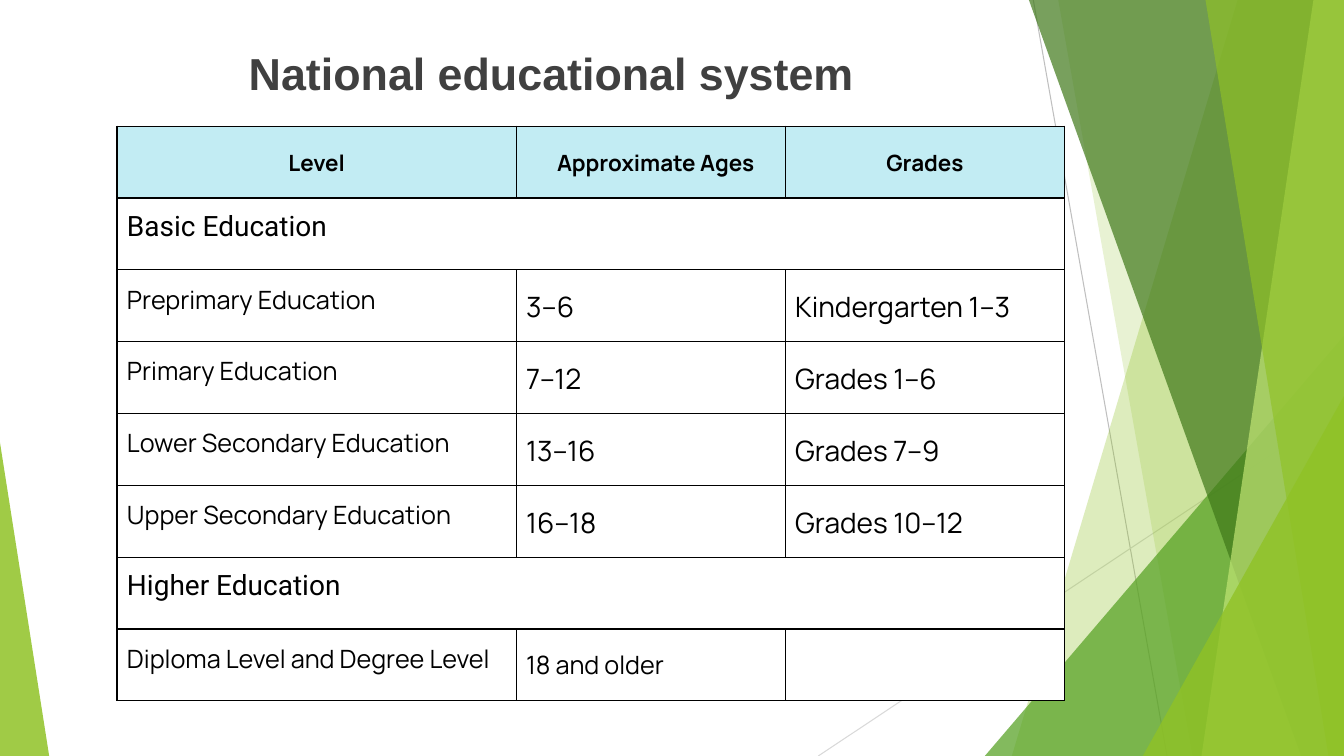
from dataclasses import dataclass
from typing import Optional

from lxml import etree
from pptx import Presentation
from pptx.dml.color import RGBColor
from pptx.enum import shapes, text
from pptx.oxml.ns import qn
from pptx.util import Cm, Pt

WIDTH, HEIGHT = 33.87, 19.05


@dataclass(frozen=True)
class Theme:
    ink: str = "000000"
    title: str = "404040"
    header: str = "C2ECF3"
    paper: str = "FFFFFF"
    green: str = "90C226"
    mid_green: str = "54A021"
    dark_green: str = "3F7819"
    pale_green: str = "C0E474"
    title_font: str = "Arial"
    body_font: str = "Manrope"
    section_font: str = "Roboto"
    title_size: float = 32
    value_size: float = 20
    level_size: float = 18
    header_size: float = 16


THEME = Theme()


@dataclass(frozen=True)
class Ray:
    start: tuple[float, float]
    end: tuple[float, float]
    color: str


@dataclass(frozen=True)
class Band:
    """A slanted left edge, filled out to the right side of the slide."""
    top_x: float
    bottom_x: float
    color: str
    opacity: int


@dataclass(frozen=True)
class Wedge:
    """A right triangle standing on the bottom of the slide."""
    left: float
    width: float
    height: float
    apex: float
    color: str
    opacity: int


@dataclass(frozen=True)
class Level:
    name: str
    ages: str = ""
    grades: str = ""
    section: bool = False


RAYS = [
    Ray((26.04, 0), (29.41, HEIGHT), "BFBFBF"),
    Ray((WIDTH, 10.24), (20.62, HEIGHT), "D9D9D9"),
]
FACETS = [
    Band(31.19, 25.5, THEME.green, 30),
    Band(26.67, 30.05, THEME.green, 20),
    Wedge(24.82, 9.05, 10.59, 1, THEME.mid_green, 72),
    Band(25.93, 32.79, THEME.dark_green, 70),
    Band(33.1, 30.28, THEME.pale_green, 70),
    Band(30.38, 33.48, THEME.green, 65),
    Wedge(28.8, 5.07, 9.07, 1, THEME.green, 80),
    Wedge(0, 1.24, 7.9, 0, THEME.green, 85),
]
HEADERS = ["Level", "Approximate Ages", "Grades"]
LEVELS = [
    Level("Basic Education", section=True),
    Level("Preprimary Education", "3–6", "Kindergarten 1–3"),
    Level("Primary Education", "7–12", "Grades 1–6"),
    Level("Lower Secondary Education", "13–16", "Grades 7–9"),
    Level("Upper Secondary Education", "16–18", "Grades 10–12"),
    Level("Higher Education", section=True),
    Level("Diploma Level and Degree Level", "18 and older"),
]
COLUMN_WIDTHS = [10.06, 6.78, 7.04]
ROW_HEIGHT = 1.81


def write(tf, content: str, *, size: float, font: str = THEME.body_font,
          color: str = THEME.ink, bold: bool = False, align=text.PP_ALIGN.LEFT,
          spacing: Optional[float] = None, after: float = 0) -> None:
    p = tf.paragraphs[0]
    p.alignment = align
    p.space_after = Pt(after)
    if spacing:
        p.line_spacing = spacing
    r = p.add_run()
    r.text = content
    r.font.size, r.font.name, r.font.bold = Pt(size), font, bold
    r.font.color.rgb = RGBColor.from_string(color)


def draw_ray(slide, ray: Ray) -> None:
    line = slide.shapes.add_connector(
        shapes.MSO_CONNECTOR.STRAIGHT, *map(Cm, ray.start + ray.end))
    line.line.color.rgb = RGBColor.from_string(ray.color)
    line.line.width = Pt(0.75)
    etree.SubElement(line._element.spPr, qn("a:effectLst"))


def draw_facet(slide, facet: Band | Wedge) -> None:
    if isinstance(facet, Band):
        builder = slide.shapes.build_freeform(Cm(facet.top_x), Cm(0))
        corners = [(WIDTH, 0), (WIDTH, HEIGHT), (facet.bottom_x, HEIGHT)]
        builder.add_line_segments([(Cm(x), Cm(y)) for x, y in corners])
        sp = builder.convert_to_shape()
    else:
        sp = slide.shapes.add_shape(
            shapes.MSO_SHAPE.ISOSCELES_TRIANGLE, Cm(facet.left),
            Cm(HEIGHT - facet.height), Cm(facet.width), Cm(facet.height))
        sp.adjustments[0] = facet.apex
    sp.shadow.inherit = False
    sp.line.fill.background()
    sp.fill.solid()
    sp.fill.fore_color.rgb = RGBColor.from_string(facet.color)
    color = sp._element.spPr.find(".//" + qn("a:srgbClr"))
    etree.SubElement(color, qn("a:alpha"), val=str(facet.opacity * 1000))


def style_cell(cell, fill: str) -> None:
    """Give the cell its margins, black borders and fill."""
    cell.margin_left = cell.margin_right = Cm(0.25)
    cell.margin_top = cell.margin_bottom = Cm(0.25)
    tc_pr = cell._tc.get_or_add_tcPr()
    for side in ("lnL", "lnR", "lnT", "lnB"):
        border = etree.SubElement(tc_pr, qn("a:" + side), w=str(Pt(1)))
        paint = etree.SubElement(border, qn("a:solidFill"))
        etree.SubElement(paint, qn("a:srgbClr"), val=THEME.ink)
    cell.fill.solid()
    cell.fill.fore_color.rgb = RGBColor.from_string(fill)


def draw_levels(slide) -> None:
    count = len(LEVELS) + 1
    table = slide.shapes.add_table(
        count, len(HEADERS), Cm(2.95), Cm(3.18),
        Cm(sum(COLUMN_WIDTHS)), Cm(ROW_HEIGHT * count)).table
    table.horz_banding = False
    for column, width in zip(table.columns, COLUMN_WIDTHS):
        column.width = Cm(width)
    for i, row in enumerate(table.rows):
        row.height = Cm(ROW_HEIGHT)
        for cell in row.cells:
            style_cell(cell, THEME.paper if i else THEME.header)

    for j, header in enumerate(HEADERS):
        cell = table.cell(0, j)
        cell.vertical_anchor = text.MSO_ANCHOR.MIDDLE
        write(cell.text_frame, header, size=THEME.header_size, bold=True,
              align=text.PP_ALIGN.CENTER, spacing=1.07, after=7.5)
    table.cell(0, 1).margin_left = Cm(0.5)

    for i, level in enumerate(LEVELS, start=1):
        name = table.cell(i, 0)
        if level.section:
            name.merge(table.cell(i, len(HEADERS) - 1))
        write(name.text_frame, level.name, spacing=1.07, after=7.5,
              size=THEME.value_size if level.section else THEME.level_size,
              font=THEME.section_font if level.section else THEME.body_font)
        for j, value in enumerate((level.ages, level.grades), start=1):
            if not value:
                continue
            cell = table.cell(i, j)
            cell.vertical_anchor = text.MSO_ANCHOR.MIDDLE
            if level.grades:
                write(cell.text_frame, value, size=THEME.value_size, spacing=1.07, after=7.5)
            else:
                write(cell.text_frame, value, size=THEME.level_size)


def main() -> None:
    prs = Presentation()
    prs.slide_width, prs.slide_height = Cm(WIDTH), Cm(HEIGHT)
    slide = prs.slides.add_slide(prs.slide_layouts[5])
    for ray in RAYS:
        draw_ray(slide, ray)
    for facet in FACETS:
        draw_facet(slide, facet)
    title = slide.shapes.title
    title.left, title.top, title.width, title.height = map(Cm, (1.96, 1.02, 23.88, 2.46))
    title.text_frame.vertical_anchor = text.MSO_ANCHOR.TOP
    title.text_frame.auto_size = text.MSO_AUTO_SIZE.NONE
    write(title.text_frame, "National educational system", size=THEME.title_size,
          font=THEME.title_font, color=THEME.title, bold=True, align=text.PP_ALIGN.CENTER)
    draw_levels(slide)
    prs.save("out.pptx")


if __name__ == "__main__":
    main()
